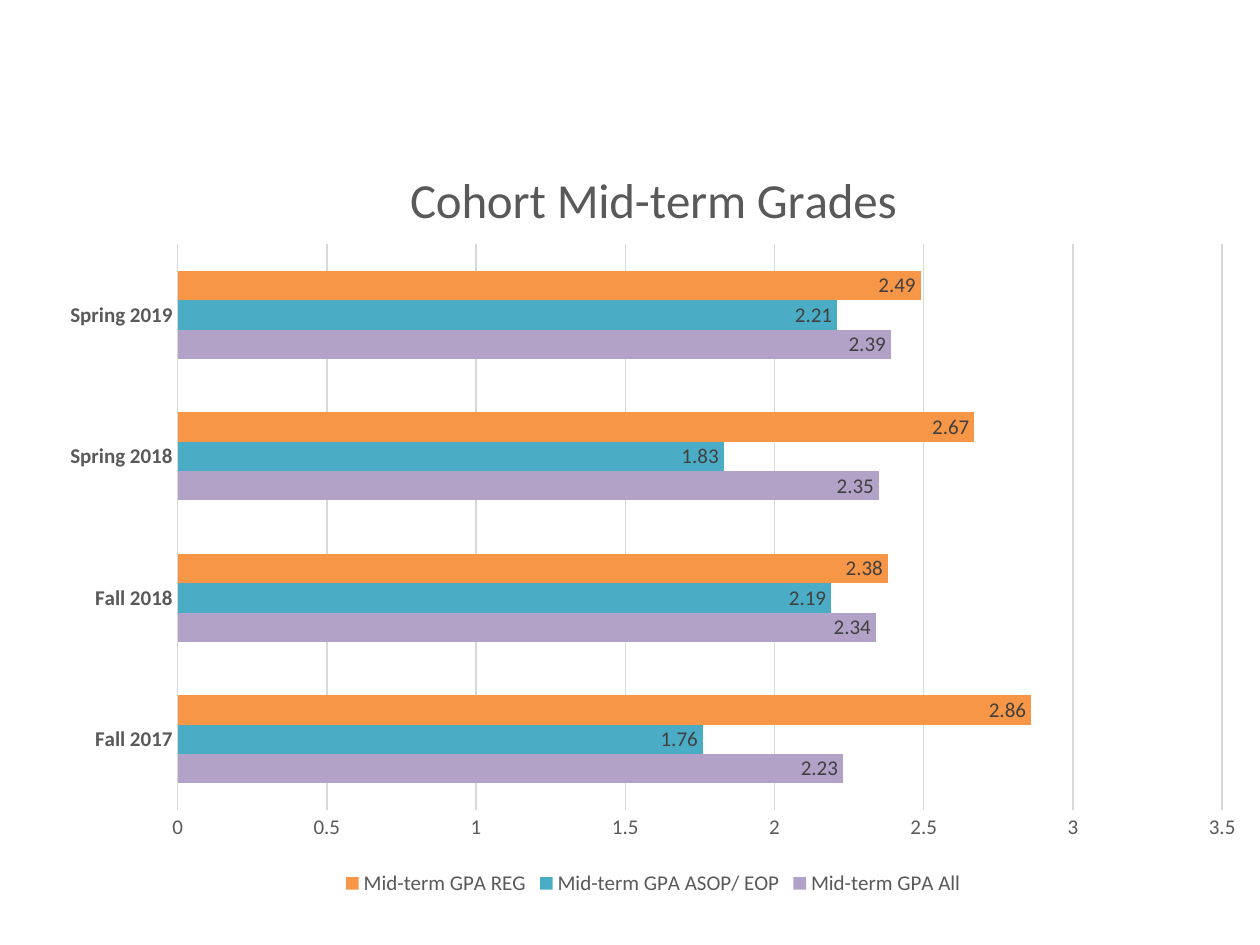
from lxml.etree import SubElement
from pptx import Presentation
from pptx.chart.data import CategoryChartData
from pptx.dml.color import RGBColor
from pptx.enum.chart import XL_CHART_TYPE, XL_LABEL_POSITION, XL_LEGEND_POSITION, XL_TICK_MARK
from pptx.oxml.ns import qn
from pptx.util import Inches, Pt

CHART_WIDTH, CHART_HEIGHT = 9.63, 6.07
COLORS = {
    "text": "595959",
    "value": "404040",
    "grid": "D9D9D9",
    "all": "B3A2C7",
    "asop": "4BACC6",
    "reg": "F79646",
}
TERMS = ["Fall 2017", "Fall 2018", "Spring 2018", "Spring 2019"]
GRADES = [
    ("Mid-term GPA All", "all", [2.23, 2.34, 2.35, 2.39]),
    ("Mid-term GPA ASOP/ EOP", "asop", [1.76, 2.19, 1.83, 2.21]),
    ("Mid-term GPA REG", "reg", [2.86, 2.38, 2.67, 2.49]),
]


def rgb(name):
    return RGBColor.from_string(COLORS[name])


def format_font(font, size=12, color="text", bold=False):
    font.name = "Calibri"
    font.size = Pt(size)
    font.bold = bold
    font.color.rgb = rgb(color)


def write_text(frame, text, **font_format):
    paragraph = frame.paragraphs[0]
    format_font(paragraph.font, **font_format)
    run = paragraph.add_run()
    run.text = text
    format_font(run.font, **font_format)


def draw_line(line):
    line.color.rgb = rgb("grid")
    line.width = Pt(0.75)


def add_grades_chart(slide):
    data = CategoryChartData()
    data.categories = TERMS
    for name, _, grades in GRADES:
        data.add_series(name, grades)
    chart = slide.shapes.add_chart(
        XL_CHART_TYPE.BAR_CLUSTERED,
        Inches(0.37), Inches(1.08), Inches(CHART_WIDTH), Inches(CHART_HEIGHT), data,
    ).chart
    format_font(chart.font, size=10)
    chart.has_title = True
    write_text(chart.chart_title.text_frame, "Cohort Mid-term Grades", size=28)
    chart.chart_title.include_in_layout = False
    return chart


def place_plot(chart, left, top, width, height):
    """Fix the inner plot area, given in inches from the chart's corner."""
    plot_area = chart.element.find(".//" + qn("c:plotArea"))
    for old_layout in plot_area.findall(qn("c:layout")):
        plot_area.remove(old_layout)
    layout = plot_area.makeelement(qn("c:layout"))
    plot_area.insert(0, layout)
    manual = SubElement(layout, qn("c:manualLayout"))
    settings = {
        "layoutTarget": "inner", "xMode": "edge", "yMode": "edge",
        "x": left / CHART_WIDTH, "y": top / CHART_HEIGHT,
        "w": width / CHART_WIDTH, "h": height / CHART_HEIGHT,
    }
    for tag, value in settings.items():
        SubElement(manual, qn(f"c:{tag}")).set("val", str(value))


def format_bars(plot):
    plot.gap_width = 182
    plot.overlap = 0
    plot.vary_by_categories = False
    for series, (_, color, _) in zip(plot.series, GRADES):
        series.format.fill.solid()
        series.format.fill.fore_color.rgb = rgb(color)
        series.invert_if_negative = False
        labels = series.data_labels
        labels.show_value = True
        labels.position = XL_LABEL_POSITION.INSIDE_END
        format_font(labels.font, color="value")


def format_axes(chart):
    terms, scale = chart.category_axis, chart.value_axis
    for axis in (terms, scale):
        axis.major_tick_mark = axis.minor_tick_mark = XL_TICK_MARK.NONE
        format_font(axis.tick_labels.font, bold=axis is terms)
    draw_line(terms.format.line)
    scale.format.line.fill.background()
    scale.has_major_gridlines = True
    draw_line(scale.major_gridlines.format.line)


def add_legend(chart):
    chart.has_legend = True
    chart.legend.position = XL_LEGEND_POSITION.BOTTOM
    chart.legend.include_in_layout = False
    format_font(chart.legend.font)


def main():
    deck = Presentation()
    deck.slide_width, deck.slide_height = Inches(10), Inches(7.5)
    slide = deck.slides.add_slide(deck.slide_layouts[6])
    chart = add_grades_chart(slide)
    place_plot(chart, left=1.04, top=0.86, width=8.29, height=4.49)
    format_bars(chart.plots[0])
    format_axes(chart)
    add_legend(chart)
    deck.save("out.pptx")


if __name__ == "__main__":
    main()
